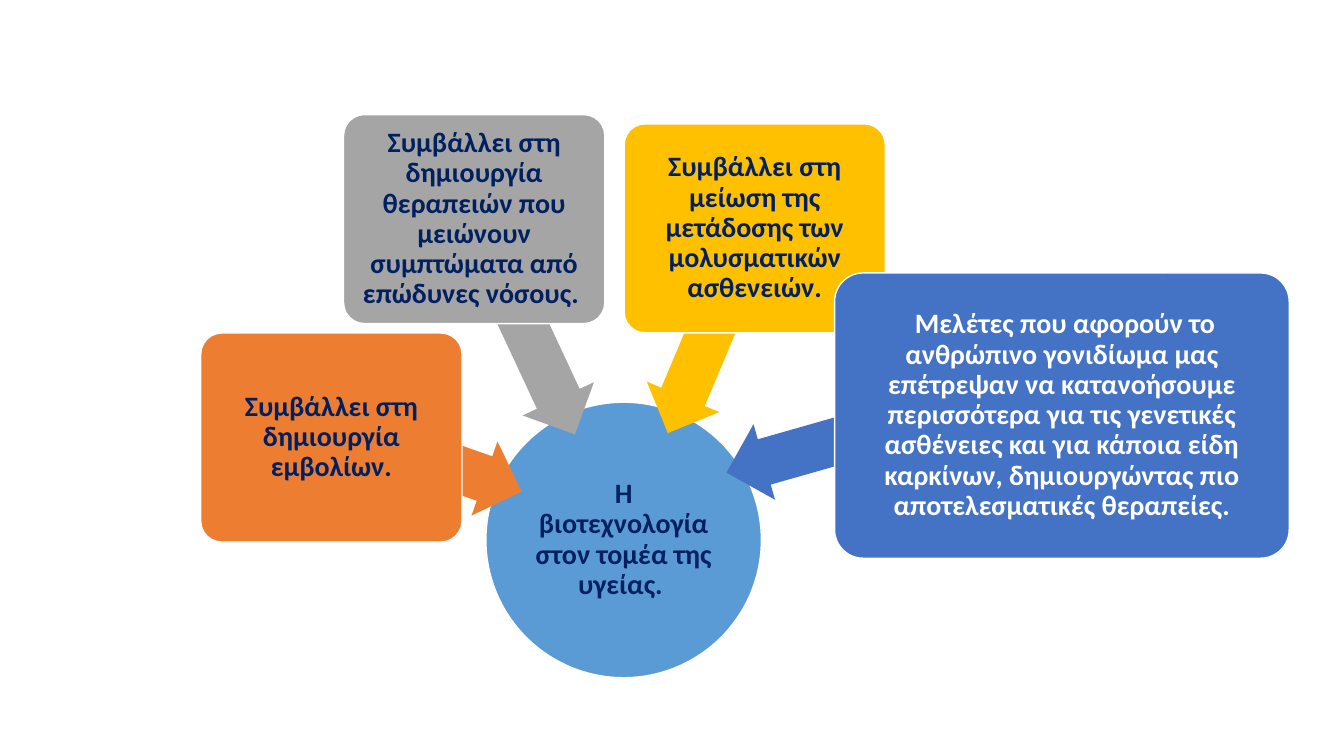
from dataclasses import dataclass

from pptx import Presentation
from pptx.dml.color import RGBColor
from pptx.enum.shapes import MSO_SHAPE
from pptx.enum.text import MSO_ANCHOR, PP_ALIGN
from pptx.shapes.autoshape import Shape
from pptx.slide import Slide
from pptx.util import Inches, Pt

WHITE = RGBColor(0xFF, 0xFF, 0xFF)
NAVY = RGBColor(0x00, 0x20, 0x60)
SKY = RGBColor(0x5B, 0x9B, 0xD5)
ORANGE = RGBColor(0xED, 0x7D, 0x31)
GRAY = RGBColor(0xA5, 0xA5, 0xA5)
GOLD = RGBColor(0xFF, 0xC0, 0x00)
BLUE = RGBColor(0x44, 0x72, 0xC4)

COLS, ROWS = 160, 90
CELL = Inches(7.5) // ROWS
ARROW_ROWS = 9.36
HUB_SIZE = 32.8


@dataclass(frozen=True)
class Contribution:
    """A box and its arrow to the hub, in grid columns and rows."""
    text: str
    color: RGBColor
    col: float
    row: float
    arrow_col: float
    arrow_row: float
    arrow_cols: float
    arrow_angle: float
    cols: float = 31.1
    rows: float = 24.88
    text_color: RGBColor = NAVY


CONTRIBUTIONS = [
    Contribution("Συμβάλλει στη δημιουργία εμβολίων.",
                 ORANGE, 23.9, 39.65, 43.32, 50.64, 19.32, 199.3),
    Contribution("Συμβάλλει στη δημιουργία θεραπειών που μειώνουν "
                 "συμπτώματα από επώδυνες νόσους. ",
                 GRAY, 40.9, 13.65, 51.12, 36, 24.36, 245),
    Contribution("Συμβάλλει στη μείωση της μετάδοσης των μολυσματικών ασθενειών.",
                 GOLD, 74.3, 14.75, 72.6, 36.48, 22.56, 292.8),
    Contribution(" Μελέτες που αφορούν το ανθρώπινο γονιδίωμα μας επέτρεψαν να "
                 "κατανοήσουμε περισσότερα για τις γενετικές ασθένειες και για "
                 "κάποια είδη καρκίνων, δημιουργώντας πιο αποτελεσματικές θεραπείες.",
                 BLUE, 99.36, 32.5, 85.8, 46.68, 35.88, 344.1, 54.12, 33.96, WHITE),
]


def add_filled(s: Slide, kind: MSO_SHAPE, col: float, row: float,
               cols: float, rows: float, color: RGBColor) -> Shape:
    sp = s.shapes.add_shape(kind, *(round(n * CELL) for n in (col, row, cols, rows)))
    sp.shadow.inherit = False
    sp.fill.solid()
    sp.fill.fore_color.rgb = color
    sp.line.fill.background()
    return sp


def add_label(sp: Shape, text: str, color: RGBColor, inset: float) -> None:
    """Give a shape its white outline and centred bold text."""
    sp.line.color.rgb = WHITE
    sp.line.width = Pt(1)
    tf = sp.text_frame
    tf.word_wrap = True
    tf.vertical_anchor = MSO_ANCHOR.MIDDLE
    tf.margin_left = tf.margin_right = tf.margin_top = tf.margin_bottom = Inches(inset)
    p = tf.paragraphs[0]
    p.text = text
    p.alignment = PP_ALIGN.CENTER
    p.line_spacing = 0.9
    p.font.name = "Calibri"
    p.font.size = Pt(20)
    p.font.bold = True
    p.font.color.rgb = color


def add_contribution(s: Slide, c: Contribution) -> None:
    arrow = add_filled(s, MSO_SHAPE.LEFT_ARROW, c.arrow_col, c.arrow_row,
                       c.arrow_cols, ARROW_ROWS, c.color)
    arrow.adjustments[0] = 0.6
    arrow.adjustments[1] = 0.5
    arrow.rotation = c.arrow_angle
    box = add_filled(s, MSO_SHAPE.ROUNDED_RECTANGLE, c.col, c.row,
                     c.cols, c.rows, c.color)
    box.adjustments[0] = 0.1
    add_label(box, c.text, c.text_color, 0.04)


def main() -> None:
    prs = Presentation()
    prs.slide_width, prs.slide_height = COLS * CELL, ROWS * CELL
    s = prs.slides.add_slide(prs.slide_layouts[6])
    hub = add_filled(s, MSO_SHAPE.OVAL, 57.84, 47.88, HUB_SIZE, HUB_SIZE, SKY)
    add_label(hub, "Η βιοτεχνολογία στον τομέα της υγείας. ", NAVY, 0.01)
    for contribution in CONTRIBUTIONS:
        add_contribution(s, contribution)
    prs.save("out.pptx")


if __name__ == "__main__":
    main()
